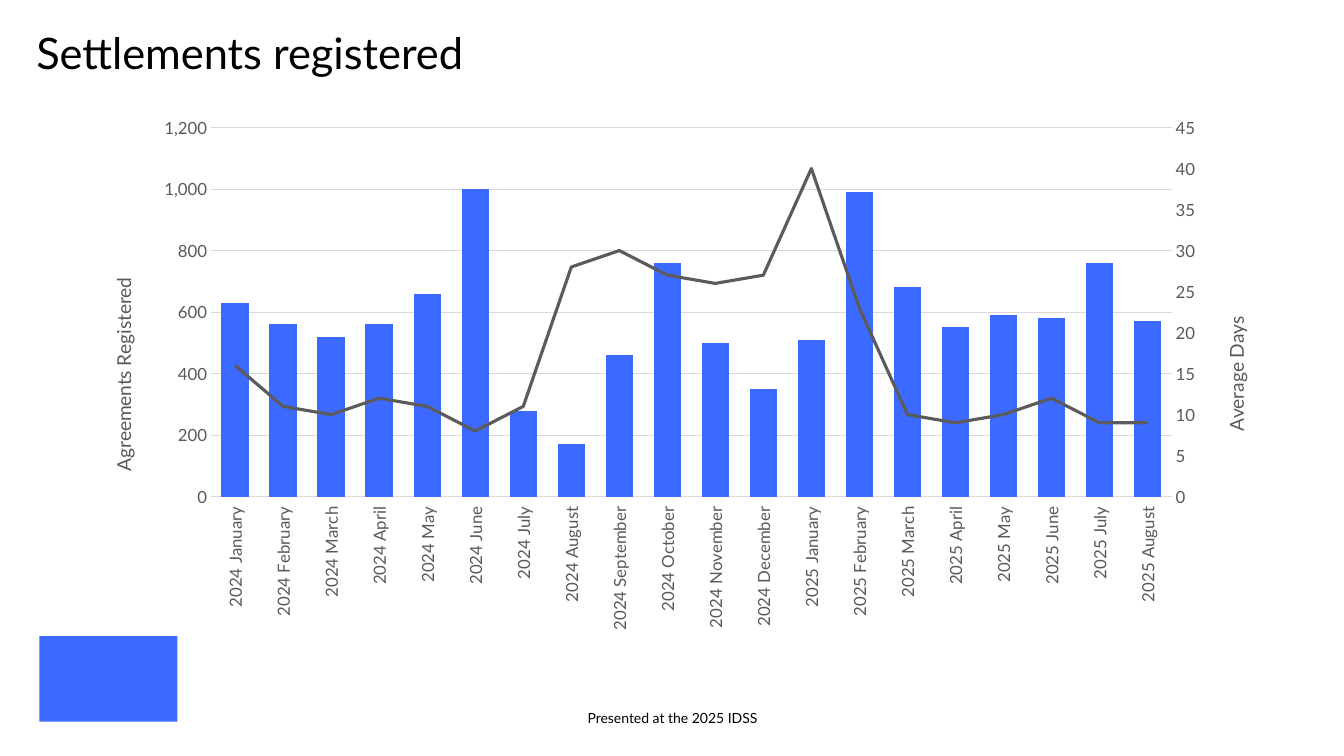
from copy import deepcopy

from lxml import etree
from pptx import Presentation
from pptx.chart.data import CategoryChartData
from pptx.dml.color import RGBColor
from pptx.enum.chart import XL_CHART_TYPE, XL_TICK_LABEL_POSITION, XL_TICK_MARK
from pptx.enum.shapes import MSO_SHAPE
from pptx.enum.text import MSO_ANCHOR, PP_ALIGN
from pptx.oxml.ns import qn
from pptx.util import Inches, Pt

STACKED = XL_CHART_TYPE.COLUMN_STACKED
NO_TICK = XL_TICK_MARK.NONE
LOW_LABELS = XL_TICK_LABEL_POSITION.LOW
RECTANGLE = MSO_SHAPE.RECTANGLE
TOP, BOTTOM = MSO_ANCHOR.TOP, MSO_ANCHOR.BOTTOM
LEFT, CENTER = PP_ALIGN.LEFT, PP_ALIGN.CENTER

BLACK = RGBColor(0x00, 0x00, 0x00)
BLUE = RGBColor(0x3C, 0x69, 0xFF)
LINE_GRAY = RGBColor(0x5B, 0x5B, 0x5B)
LABEL_GRAY = RGBColor(0x59, 0x59, 0x59)
GRID_GRAY = RGBColor(0xD9, 0xD9, 0xD9)
FONT = "Lato"
UPWARDS = "-5400000"

MONTHS = ("January February March April May June July August "
          "September October November December").split()
CATEGORIES = [f"2024 {month}" for month in MONTHS] + [f"2025 {month}" for month in MONTHS[:8]]
AGREEMENTS = [630, 560, 520, 560, 660, 1000, 280, 170, 460, 760,
              500, 350, 510, 990, 680, 550, 590, 580, 760, 570]
AVERAGE_DAYS = [16, 11, 10, 12, 11, 8, 11, 28, 30, 27,
                26, 27, 40, 23, 10, 9, 10, 12, 9, 9]


def style_font(font, size, color):
    """Apply the deck font with a size and colour."""
    font.name = FONT
    font.size = Pt(size)
    font.color.rgb = color


def add_text(slide, box, text, size, alignment=LEFT, anchor=TOP, line_spacing=1.0):
    """Add a one-paragraph text box without margins."""
    frame = slide.shapes.add_textbox(*map(Inches, box)).text_frame
    frame.word_wrap = True
    frame.vertical_anchor = anchor
    frame.margin_left = frame.margin_right = frame.margin_top = frame.margin_bottom = 0
    paragraph = frame.paragraphs[0]
    paragraph.text = text
    paragraph.alignment = alignment
    paragraph.line_spacing = line_spacing
    style_font(paragraph.font, size, BLACK)


def add_emblem(slide, box):
    """Add the plain blue emblem in the corner."""
    emblem = slide.shapes.add_shape(RECTANGLE, *map(Inches, box))
    emblem.shadow.inherit = False
    emblem.fill.solid()
    emblem.fill.fore_color.rgb = BLUE
    emblem.line.fill.background()


def chart_element(tag, parent=None, **attributes):
    """Create a chart XML element, appended to a parent if there is one."""
    element = etree.Element(qn(f"c:{tag}"), attributes)
    if parent is not None:
        parent.append(element)
    return element


def set_layout(parent, index, **shares):
    """Place a chart part by shares of the chart's size."""
    for old_layout in parent.findall(qn("c:layout")):
        parent.remove(old_layout)
    layout = chart_element("layout")
    manual = chart_element("manualLayout", layout)
    if "w" in shares:
        chart_element("layoutTarget", manual, val="inner")
    for mode in ("xMode", "yMode"):
        chart_element(mode, manual, val="edge")
    for name, share in shares.items():
        chart_element(name, manual, val=str(share))
    parent.insert(index, layout)


def style_category_axis(axis):
    """Style the month axis with upright labels."""
    axis.major_tick_mark = NO_TICK
    axis.tick_label_position = LOW_LABELS
    style_font(axis.tick_labels.font, 12, LABEL_GRAY)
    axis.format.line.color.rgb = GRID_GRAY
    axis.format.line.width = Pt(0.75)


def style_value_axis(axis):
    """Style the left axis, its gridlines and its title."""
    axis.minimum_scale, axis.maximum_scale, axis.major_unit = 0, 1200, 200
    axis.major_tick_mark = NO_TICK
    axis.format.line.fill.background()
    axis.major_gridlines.format.line.color.rgb = GRID_GRAY
    axis.major_gridlines.format.line.width = Pt(0.75)
    axis.tick_labels.number_format = "#,##0"
    axis.tick_labels.number_format_is_linked = False
    style_font(axis.tick_labels.font, 12, LABEL_GRAY)
    paragraph = axis.axis_title.text_frame.paragraphs[0]
    paragraph.text = "Agreements Registered"
    style_font(paragraph.font, 13.7, LABEL_GRAY)
    paragraph.font.bold = False


def move_to_right_axis(plot_area):
    """Turn the second series into a line on its own right axis."""
    bars = plot_area.find(qn("c:barChart"))
    series = bars.findall(qn("c:ser"))[1]
    for invert in series.findall(qn("c:invertIfNegative")):
        series.remove(invert)
    marker = chart_element("marker")
    chart_element("symbol", marker, val="none")
    series.find(qn("c:spPr")).addnext(marker)
    chart_element("smooth", series, val="0")

    lines = chart_element("lineChart")
    chart_element("grouping", lines, val="standard")
    chart_element("varyColors", lines, val="0")
    lines.append(series)
    chart_element("marker", lines, val="1")
    bars.addnext(lines)

    left_axis = plot_area.find(qn("c:valAx"))
    right_axis = deepcopy(left_axis)
    hidden_axis = deepcopy(plot_area.find(qn("c:catAx")))
    for axis, own, other in ((hidden_axis, "5001", "5002"), (right_axis, "5002", "5001")):
        chart_element("axId", lines, val=own)
        axis.find(qn("c:axId")).set("val", own)
        axis.find(qn("c:crossAx")).set("val", other)
    hidden_axis.find(qn("c:delete")).set("val", "1")
    right_axis.remove(right_axis.find(qn("c:majorGridlines")))
    for tag, value in (("axPos", "r"), ("crosses", "max"), ("majorUnit", "5")):
        right_axis.find(qn(f"c:{tag}")).set("val", value)
    right_axis.find(qn("c:scaling")).find(qn("c:max")).set("val", "45")
    right_axis.find(qn("c:numFmt")).set("formatCode", "0")
    next(right_axis.iter(qn("a:t"))).text = "Average Days"
    left_axis.addnext(right_axis)
    right_axis.addnext(hidden_axis)
    return left_axis, right_axis


def add_settlements_chart(slide, box):
    """Add the monthly columns with the line of average days."""
    data = CategoryChartData()
    data.categories = CATEGORIES
    data.add_series("Agreements Registered", AGREEMENTS)
    data.add_series("Average Days", AVERAGE_DAYS)
    chart = slide.shapes.add_chart(STACKED, *map(Inches, box), data).chart
    chart.has_legend = chart.has_title = False
    style_font(chart.font, 10, BLACK)
    plot = chart.plots[0]
    plot.gap_width, plot.overlap, plot.vary_by_categories = 75, 100, False
    columns, days = plot.series
    columns.format.fill.solid()
    columns.format.fill.fore_color.rgb = BLUE
    days.format.line.color.rgb = LINE_GRAY
    days.format.line.width = Pt(2.25)
    style_category_axis(chart.category_axis)
    style_value_axis(chart.value_axis)

    plot_area = next(chart.element.iter(qn("c:plotArea")))
    label_body = next(plot_area.find(qn("c:catAx")).iter(qn("a:bodyPr")))
    title_body = next(plot_area.find(qn("c:valAx")).find(qn("c:title")).iter(qn("a:bodyPr")))
    for body in (label_body, title_body):
        body.set("rot", UPWARDS)
        body.set("vert", "horz")
    left_axis, right_axis = move_to_right_axis(plot_area)
    set_layout(plot_area, 0, x=0.103, y=0.037, w=0.808, h=0.691)
    set_layout(left_axis.find(qn("c:title")), 1, x=0.015, y=0.311)
    set_layout(right_axis.find(qn("c:title")), 1, x=0.951, y=0.384)


def main():
    """Build the slide and save it."""
    presentation = Presentation()
    presentation.slide_width, presentation.slide_height = Inches(13.33), Inches(7.5)
    slide = presentation.slides.add_slide(presentation.slide_layouts[6])
    add_emblem(slide, (0.39, 6.31, 1.37, 0.85))
    add_text(slide, (0.36, 0.32, 8.15, 1.35), "Settlements registered", 31, line_spacing=0.9)
    add_text(slide, (4.42, 7.01, 4.5, 0.2), "Presented at the 2025 IDSS", 10, CENTER, BOTTOM)
    add_settlements_chart(slide, (0.88, 1.07, 11.79, 5.3))
    presentation.save("out.pptx")


if __name__ == "__main__":
    main()
